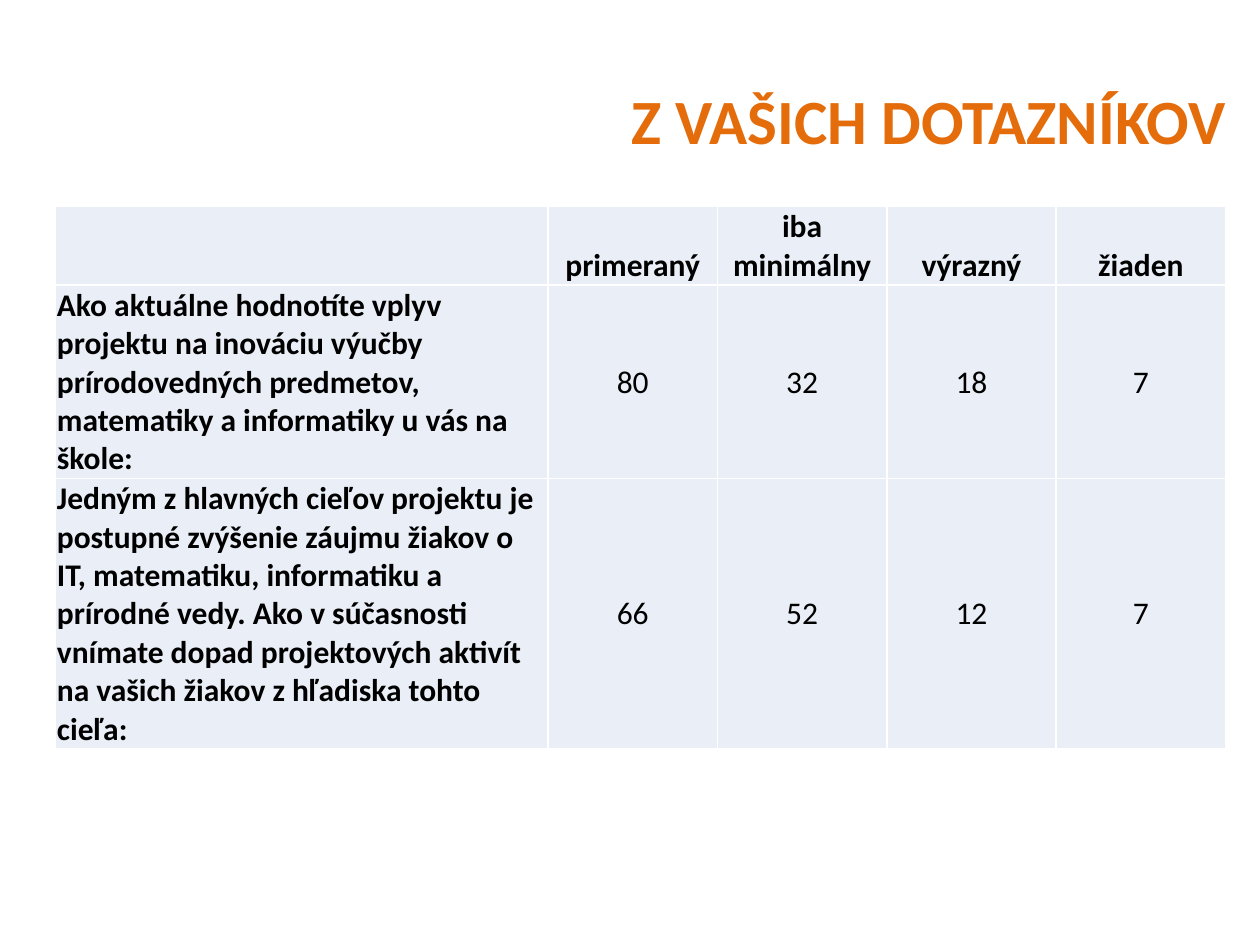
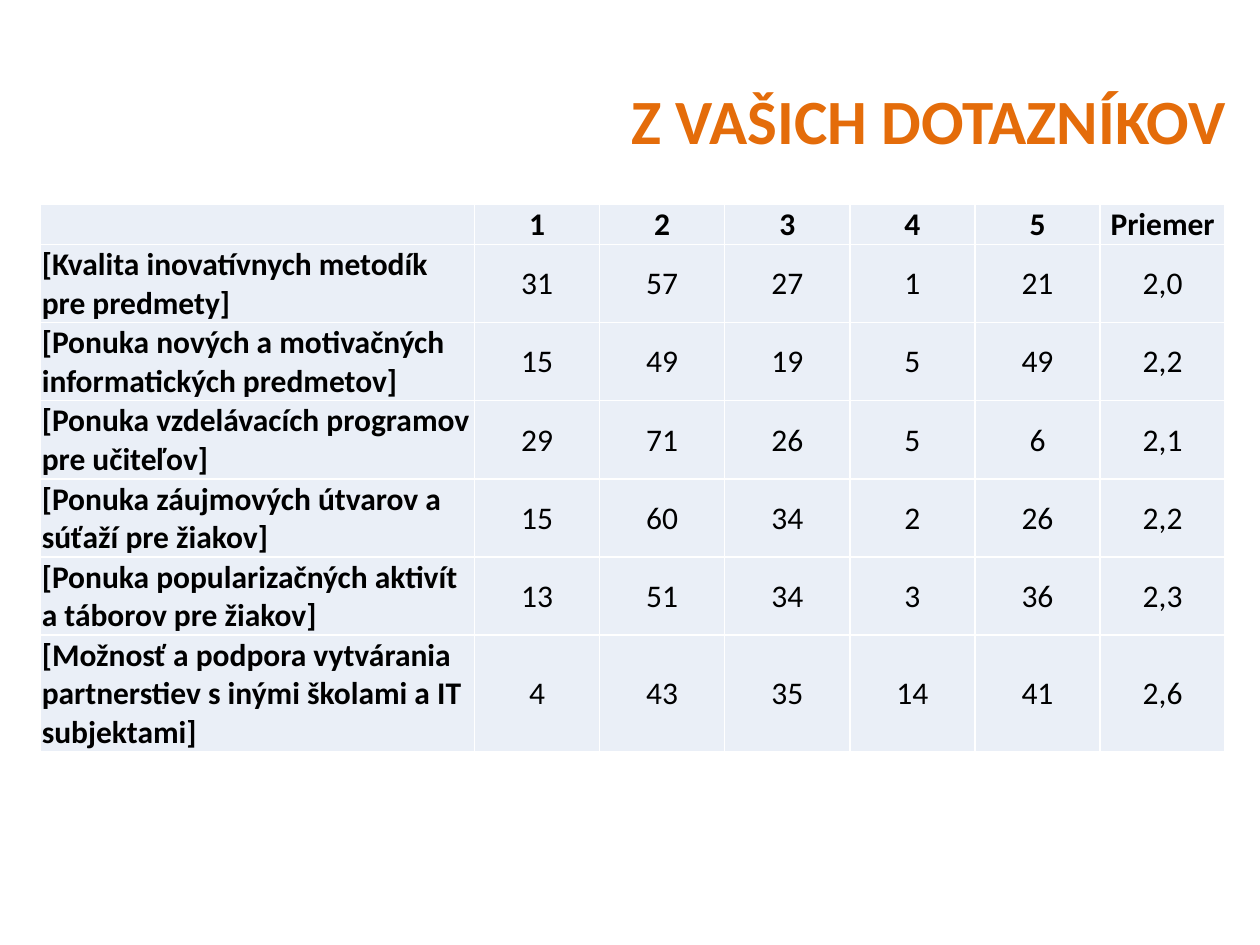
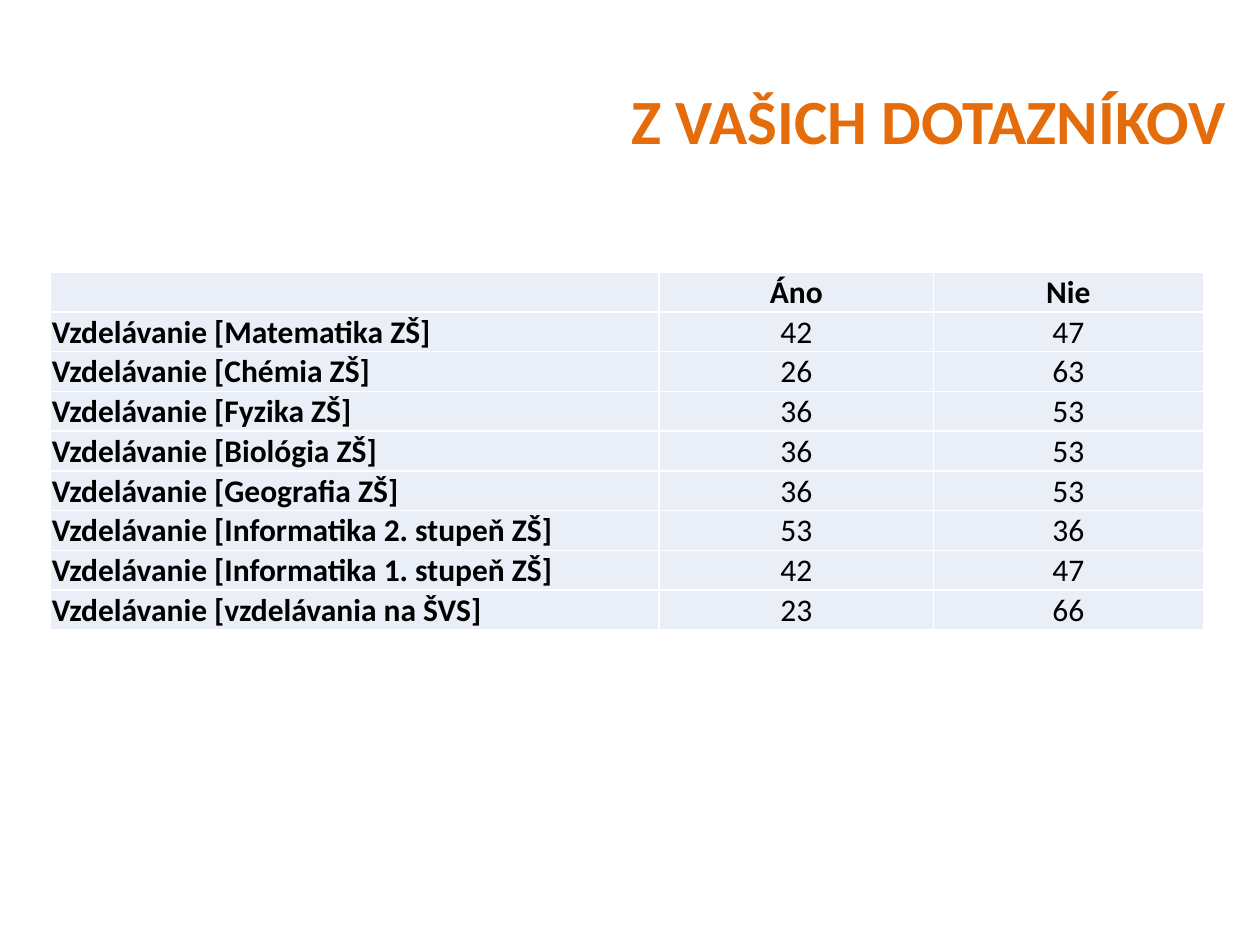
from dataclasses import dataclass

from lxml.etree import SubElement
from pptx import Presentation
from pptx.dml.color import RGBColor
from pptx.enum.text import MSO_ANCHOR, MSO_AUTO_SIZE, PP_ALIGN
from pptx.oxml.ns import qn
from pptx.util import Pt

LEFT, CENTER, RIGHT = PP_ALIGN.LEFT, PP_ALIGN.CENTER, PP_ALIGN.RIGHT
MIDDLE, BOTTOM = MSO_ANCHOR.MIDDLE, MSO_ANCHOR.BOTTOM
NO_AUTOFIT = MSO_AUTO_SIZE.NONE
TITLE_ONLY = 5


@dataclass(frozen=True)
class Theme:
    """Colours, type sizes and measures that all slides share."""

    font: str = "Calibri"
    title_color: str = "E46C0A"
    text_color: str = "000000"
    cell_fill: str = "EAEFF7"
    border_color: str = "FFFFFF"
    title_size: float = 36
    table_size: float = 18
    border_width: float = 1
    cell_inset: float = 0.72
    title_spacing: float = 0.9
    title_box: tuple = (231.8, 48.2, 476, 46)


THEME = Theme()
TITLE = "Z VAŠICH DOTAZNÍKOV"

IMPACT_ROWS = [
    ("", "primeraný", "iba minimálny", "výrazný", "žiaden"),
    ("Ako aktuálne hodnotíte vplyv projektu na inováciu výučby prírodovedných "
     "predmetov, matematiky a informatiky u vás na škole:", "80", "32", "18", "7"),
    ("Jedným z hlavných cieľov projektu je postupné zvýšenie záujmu žiakov "
     "o IT, matematiku, informatiku a prírodné vedy. Ako v súčasnosti vnímate "
     "dopad projektových aktivít na vašich žiakov z hľadiska tohto cieľa:",
     "66", "52", "12", "7"),
]

RATING_ROWS = [
    ("", "1", "2", "3", "4", "5", "Priemer"),
    ("[Kvalita inovatívnych metodík pre predmety]",
     "31", "57", "27", "1", "21", "2,0"),
    ("[Ponuka nových a motivačných informatických predmetov]",
     "15", "49", "19", "5", "49", "2,2"),
    ("[Ponuka vzdelávacích programov pre učiteľov]",
     "29", "71", "26", "5", "6", "2,1"),
    ("[Ponuka záujmových útvarov a súťaží pre žiakov]",
     "15", "60", "34", "2", "26", "2,2"),
    ("[Ponuka popularizačných aktivít a táborov pre žiakov]",
     "13", "51", "34", "3", "36", "2,3"),
    ("[Možnosť a podpora vytvárania partnerstiev s inými školami a IT subjektami]",
     "4", "43", "35", "14", "41", "2,6"),
]

TRAINING_ROWS = [
    ("", "Áno", "Nie"),
    ("Vzdelávanie [Matematika ZŠ]", "42", "47"),
    ("Vzdelávanie [Chémia ZŠ]", "26", "63"),
    ("Vzdelávanie [Fyzika ZŠ]", "36", "53"),
    ("Vzdelávanie [Biológia ZŠ]", "36", "53"),
    ("Vzdelávanie [Geografia ZŠ]", "36", "53"),
    ("Vzdelávanie [Informatika 2. stupeň ZŠ]", "53", "36"),
    ("Vzdelávanie [Informatika 1. stupeň ZŠ]", "42", "47"),
    ("Vzdelávanie [vzdelávania na ŠVS]", "23", "66"),
]


def write_text(frame, text, *, size, color, bold=False, align=LEFT, spacing=None):
    """Write one formatted paragraph into a text frame."""
    frame.word_wrap = True
    para = frame.paragraphs[0]
    para.alignment = align
    if spacing:
        para.line_spacing = spacing
    if text:
        span = para.add_run()
        span.text = text
        span.font.name = THEME.font
        span.font.size = Pt(size)
        span.font.bold = bold
        span.font.color.rgb = RGBColor.from_string(color)


def add_title(page, text, box):
    """Place and format the title placeholder in the given box."""
    title = page.shapes.title
    title.left, title.top, title.width, title.height = map(Pt, box)
    frame = title.text_frame
    frame.auto_size = NO_AUTOFIT
    frame.vertical_anchor = MIDDLE
    write_text(frame, text, size=THEME.title_size, color=THEME.title_color,
               bold=True, align=RIGHT, spacing=THEME.title_spacing)


def style_cell(cell, anchor):
    """Give a cell its borders, fill, insets and anchor."""
    properties = cell._tc.get_or_add_tcPr()
    for side in ("lnL", "lnR", "lnT", "lnB"):
        line = SubElement(properties, qn(f"a:{side}"), w=str(Pt(THEME.border_width)))
        fill = SubElement(line, qn("a:solidFill"))
        SubElement(fill, qn("a:srgbClr"), val=THEME.border_color)
    cell.fill.solid()
    cell.fill.fore_color.rgb = RGBColor.from_string(THEME.cell_fill)
    cell.margin_left = cell.margin_right = cell.margin_top = Pt(THEME.cell_inset)
    cell.margin_bottom = Pt(0)
    cell.vertical_anchor = anchor


def add_survey_table(page, rows, origin, widths, heights, header_anchor):
    """Draw a table with bold questions and headings and centred answers."""
    left, top = origin
    shape = page.shapes.add_table(len(rows), len(widths), Pt(left), Pt(top),
                                  Pt(sum(widths)), Pt(sum(heights)))
    table = shape.table
    table.first_row = table.horz_banding = False
    for column, width in zip(table.columns, widths):
        column.width = Pt(width)
    for row_index, (row, height) in enumerate(zip(rows, heights)):
        table.rows[row_index].height = Pt(height)
        for column_index, text in enumerate(row):
            is_header, is_question = row_index == 0, column_index == 0
            cell = table.cell(row_index, column_index)
            anchor = header_anchor if is_header else BOTTOM if is_question else MIDDLE
            style_cell(cell, anchor)
            write_text(cell.text_frame, text, size=THEME.table_size,
                       color=THEME.text_color, bold=is_header or is_question,
                       align=LEFT if is_question else CENTER)


def add_survey_page(deck, rows, origin, widths, heights, header_anchor=MIDDLE):
    """Add a slide with the shared title and one survey table."""
    page = deck.slides.add_slide(deck.slide_layouts[TITLE_ONLY])
    add_title(page, TITLE, THEME.title_box)
    add_survey_table(page, rows, origin, widths, heights, header_anchor)


def main():
    """Build the three survey slides and save them."""
    deck = Presentation()
    deck.slide_width, deck.slide_height = Pt(720), Pt(540)
    add_survey_page(deck, IMPACT_ROWS, (31.8, 118.1), [281.4] + [96.8] * 4,
                    [44.6, 110.4, 154.3], header_anchor=BOTTOM)
    add_survey_page(deck, RATING_ROWS, (23.2, 116.9), [248] + [71.5] * 6,
                    [22.3] + [44.6] * 5 + [66.3])
    add_survey_page(deck, TRAINING_ROWS, (28.9, 155.5), [347.8, 156.8, 154.1],
                    [22.7] * len(TRAINING_ROWS))
    deck.save("out.pptx")


if __name__ == "__main__":
    main()
